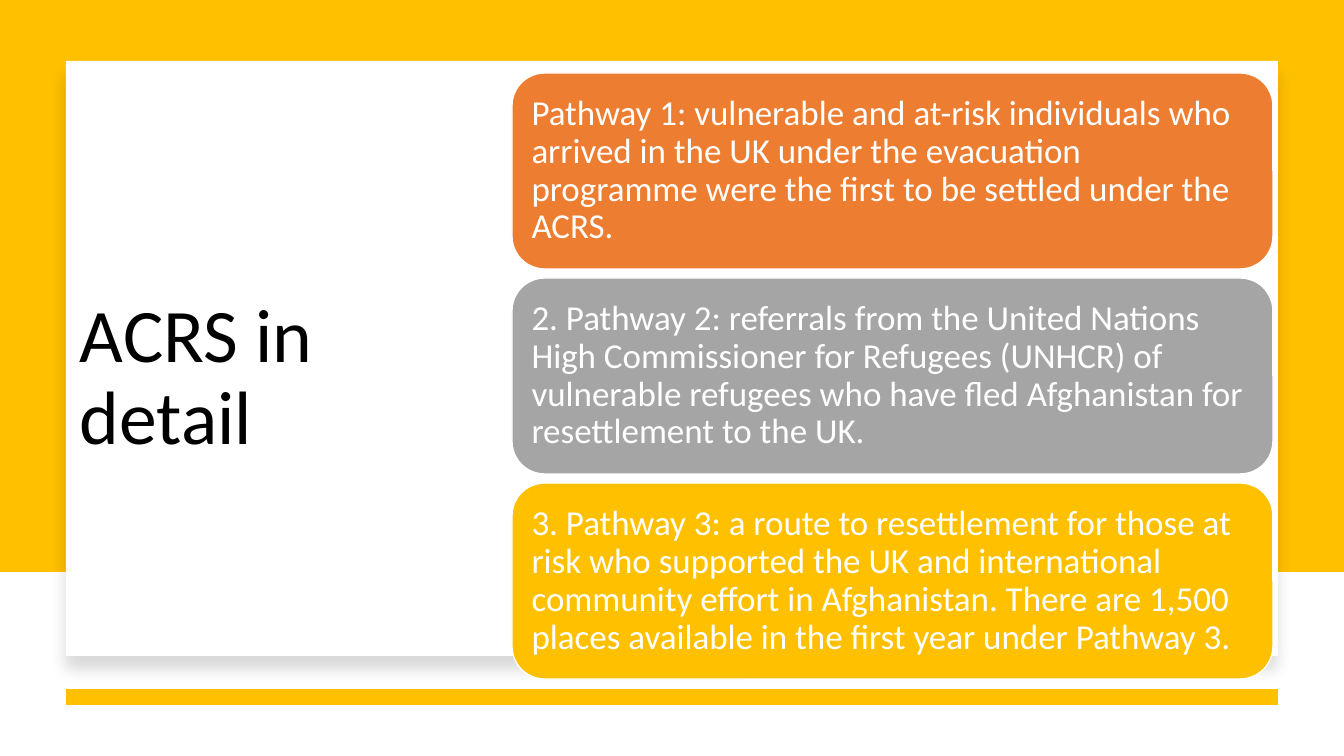
from dataclasses import dataclass

from lxml.etree import SubElement
from pptx import Presentation
from pptx.dml.color import RGBColor
from pptx.enum.shapes import MSO_CONNECTOR as Connector, MSO_SHAPE as Shape
from pptx.enum.text import MSO_ANCHOR as Anchor, PP_ALIGN as Align
from pptx.oxml.ns import qn
from pptx.util import Pt

EMU_PER_PX = 914400 / 100.8


@dataclass(frozen=True)
class Theme:
    font: str = "Calibri"
    gold: str = "FFC000"
    orange: str = "ED7D31"
    grey: str = "A5A5A5"
    white: str = "FFFFFF"
    black: str = "000000"
    title_size: int = 54
    pathway_size: int = 25
    line_spacing: float = 0.9


THEME = Theme()

PATHWAYS = (
    (THEME.orange, "Pathway 1: vulnerable and at-risk individuals who arrived in the UK under the "
                   "evacuation programme were the first to be settled under the ACRS."),
    (THEME.grey, "2. Pathway 2: referrals from the United Nations High Commissioner for Refugees "
                 "(UNHCR) of vulnerable refugees who have fled Afghanistan for resettlement to the UK."),
    (THEME.gold, "3. Pathway 3: a route to resettlement for those at risk who supported the UK and "
                 "international community effort in Afghanistan. There are 1,500 places available in "
                 "the first year under Pathway 3."),
)


def px(length):
    return round(length * EMU_PER_PX)


def rgb(colour):
    return RGBColor.from_string(colour)


def add_block(slide, kind, left, top, width, height, fill):
    block = slide.shapes.add_shape(kind, px(left), px(top), px(width), px(height))
    block.shadow.inherit = False
    block.fill.solid()
    block.fill.fore_color.rgb = rgb(fill)
    block.line.fill.background()
    return block


def add_shadow(block):
    effects = block._element.spPr.find(qn("a:effectLst"))
    shadow = SubElement(effects, qn("a:outerShdw"), blurRad=str(Pt(11)), dist=str(Pt(10)),
                        dir="5400000", algn="t", rotWithShape="0")
    colour = SubElement(shadow, qn("a:srgbClr"), val=THEME.black)
    SubElement(colour, qn("a:alpha"), val="15000")


def write_text(holder, wording, size, colour, inset_x, inset_y):
    frame = holder.text_frame
    frame.text = wording
    frame.word_wrap = True
    frame.vertical_anchor = Anchor.MIDDLE
    frame.margin_left = frame.margin_right = px(inset_x)
    frame.margin_top = frame.margin_bottom = px(inset_y)
    paragraph = frame.paragraphs[0]
    paragraph.alignment = Align.LEFT
    paragraph.line_spacing = THEME.line_spacing
    font = paragraph.runs[0].font
    font.name = THEME.font
    font.size = Pt(size)
    font.color.rgb = rgb(colour)


def add_title(slide, wording):
    title = slide.shapes.add_textbox(px(70), px(71), px(377), px(616))
    write_text(title, wording, THEME.title_size, THEME.black, 10, 5)


def add_pathway(slide, top, fill, wording):
    card = add_block(slide, Shape.ROUNDED_RECTANGLE, 512, top, 761, 196, fill)
    card.line.color.rgb = rgb(THEME.white)
    card.line.width = Pt(1)
    write_text(card, wording, THEME.pathway_size, THEME.white, 10, 10)


def add_rule(slide, left, right, y):
    rule = slide.shapes.add_connector(Connector.STRAIGHT, px(right), px(y), px(left), px(y))
    rule.line.color.rgb = rgb(THEME.gold)
    rule.line.width = Pt(12)
    SubElement(rule._element.spPr, qn("a:effectLst"))


def main():
    deck = Presentation()
    deck.slide_width, deck.slide_height = px(1344), px(756)
    slide = deck.slides.add_slide(deck.slide_layouts[6])

    add_block(slide, Shape.RECTANGLE, 0, 0, 1344, 572, THEME.gold)
    panel = add_block(slide, Shape.RECTANGLE, 66, 61, 1212, 595, THEME.white)
    add_shadow(panel)
    add_rule(slide, 66, 1278, 697)
    add_title(slide, "ACRS in detail")
    for index, (fill, wording) in enumerate(PATHWAYS):
        add_pathway(slide, 73 + index * 205, fill, wording)

    deck.save("out.pptx")


if __name__ == "__main__":
    main()
